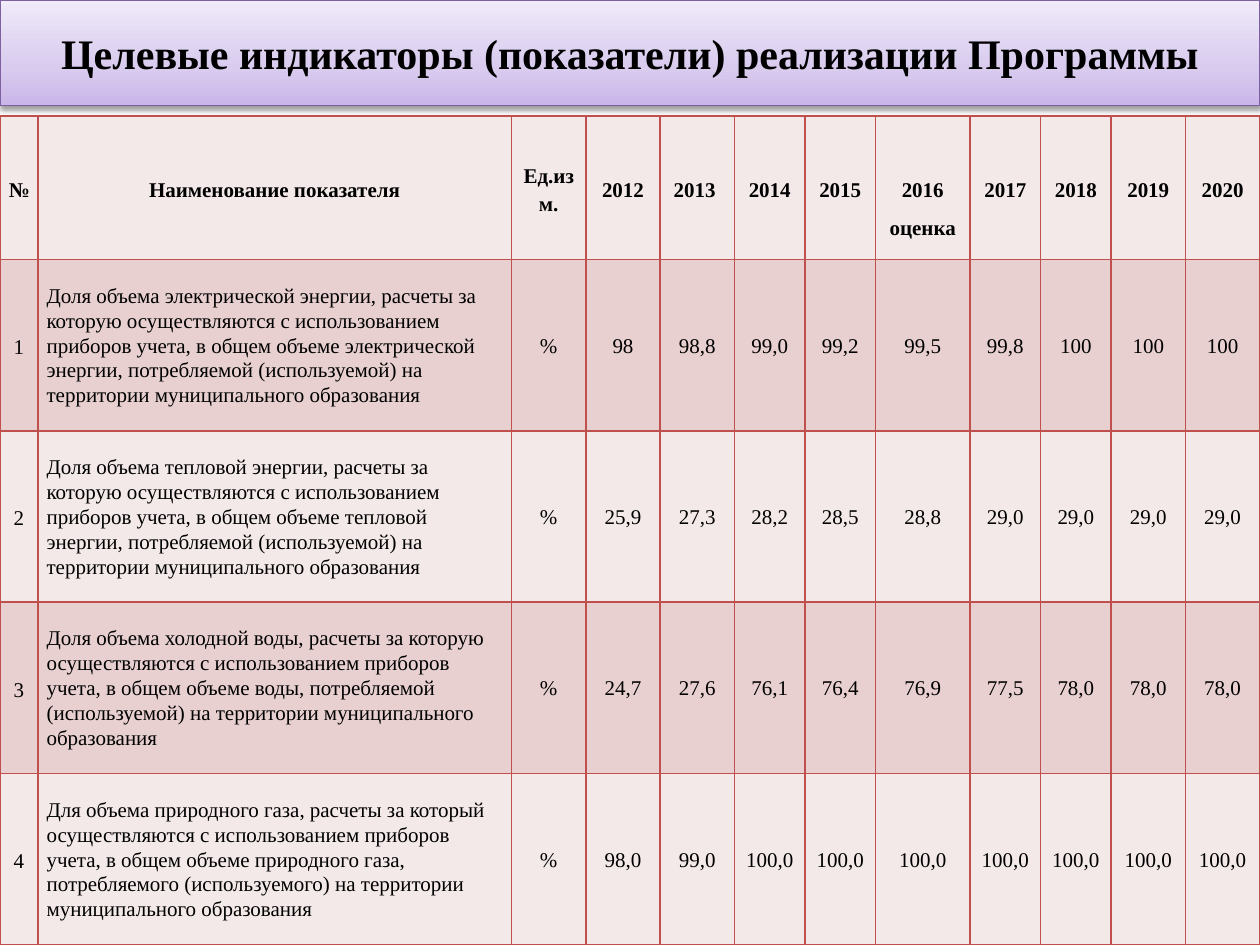
import copy

import pptx
import pptx.dml.color
import pptx.enum.shapes
import pptx.enum.text
import pptx.oxml
import pptx.oxml.ns
import pptx.util
from pptx.dml.color import RGBColor
from pptx.util import Inches

BLACK = RGBColor(0x00, 0x00, 0x00)
TITLE_LINE = RGBColor(0x7D, 0x60, 0xA0)
TITLE_STOPS = [
    (0, RGBColor(0xC9, 0xB5, 0xE8)),
    (0.35, RGBColor(0xD8, 0xCB, 0xEE)),
    (1, RGBColor(0xF0, 0xEA, 0xF9)),
]
BORDER = RGBColor(0xC0, 0x50, 0x4D)
BAND_FILLS = [RGBColor(0xF4, 0xE9, 0xE9), RGBColor(0xE8, 0xD0, 0xD0)]
FONT_NAME = "Times New Roman"
CENTER = pptx.enum.text.PP_ALIGN.CENTER
LEFT = pptx.enum.text.PP_ALIGN.LEFT
MIDDLE = pptx.enum.text.MSO_ANCHOR.MIDDLE

TITLE = "Целевые индикаторы (показатели) реализации Программы"
COLUMN_WIDTHS = [0.3, 3.76, 0.59, 0.59, 0.59, 0.56, 0.56, 0.75, 0.56, 0.56, 0.59, 0.59]
ROW_HEIGHTS = [1.14] + [1.36] * 4
HEADER = ["№", "Наименование показателя", "Ед.изм.", "2012", "2013 ", "2014", "2015",
          "2016\nоценка", "2017", "2018", "2019", "2020"]
INDICATORS = [
    ("Доля объема электрической энергии, расчеты за которую осуществляются с использованием "
     "приборов учета, в общем объеме электрической энергии, потребляемой (используемой) на "
     "территории муниципального образования",
     "98 98,8 99,0 99,2 99,5 99,8 100 100 100"),
    ("Доля объема тепловой энергии, расчеты за которую осуществляются с использованием "
     "приборов учета, в общем объеме тепловой энергии, потребляемой (используемой) на "
     "территории муниципального образования",
     "25,9 27,3 28,2 28,5 28,8 29,0 29,0 29,0 29,0"),
    ("Доля объема холодной воды, расчеты за которую осуществляются с использованием "
     "приборов учета, в общем объеме воды, потребляемой (используемой) на "
     "территории муниципального образования",
     "24,7 27,6 76,1 76,4 76,9 77,5 78,0 78,0 78,0"),
    ("Для объема природного газа, расчеты за который осуществляются с использованием "
     "приборов учета, в общем объеме природного газа, потребляемого (используемого) на "
     "территории муниципального образования",
     "98,0 99,0 100,0 100,0 100,0 100,0 100,0 100,0 100,0"),
]


def set_attributes(target, values):
    """Set every named value on the target object."""
    for name, value in values.items():
        setattr(target, name, value)


def write_text(text_frame, text, size, bold, alignment, line_spacing):
    """Write one paragraph for each line of text."""
    text_frame.text = text
    for index, paragraph in enumerate(text_frame.paragraphs):
        set_attributes(paragraph, {
            "alignment": alignment,
            "line_spacing": line_spacing,
            "space_before": pptx.util.Pt(6 if index else 0),
        })
        for run in paragraph.runs:
            set_attributes(run.font, {"name": FONT_NAME, "size": pptx.util.Pt(size), "bold": bold})
            run.font.color.rgb = BLACK


def apply_gradient(shape):
    """Fill the shape with the three title colours, from bottom to top."""
    shape.fill.gradient()
    shape.fill.gradient_angle = 90
    stop_list = shape._element.spPr.find(".//" + pptx.oxml.ns.qn("a:gsLst"))
    stop_list.append(copy.deepcopy(stop_list[-1]))
    for stop, (position, color) in zip(shape.fill.gradient_stops, TITLE_STOPS):
        stop.position = position
        stop.color.rgb = color


def apply_shadow(shape):
    """Give the shape a soft shadow that falls downwards."""
    shape.shadow.inherit = False
    effects = shape._element.spPr.find(pptx.oxml.ns.qn("a:effectLst"))
    effects.append(pptx.oxml.parse_xml(
        f'<a:outerShdw {pptx.oxml.ns.nsdecls("a")} blurRad="{pptx.util.Pt(3.1)}" '
        f'dist="{pptx.util.Pt(1.6)}" dir="5400000" rotWithShape="0">'
        '<a:srgbClr val="000000"><a:alpha val="38000"/></a:srgbClr></a:outerShdw>'))


def add_title_band(slide):
    """Add the title on its gradient band."""
    shape = slide.shapes.add_shape(
        pptx.enum.shapes.MSO_SHAPE.RECTANGLE, 0, 0, Inches(10), Inches(0.84))
    apply_gradient(shape)
    shape.line.color.rgb = TITLE_LINE
    shape.line.width = pptx.util.Pt(0.75)
    apply_shadow(shape)
    set_attributes(shape.text_frame, {"word_wrap": True, "vertical_anchor": MIDDLE})
    write_text(shape.text_frame, TITLE, 24, True, CENTER, 1)


def add_borders(cell):
    """Draw a thin line on all four sides of the cell."""
    properties = cell._tc.get_or_add_tcPr()
    for side in ("lnL", "lnR", "lnT", "lnB"):
        properties.append(pptx.oxml.parse_xml(
            f'<a:{side} {pptx.oxml.ns.nsdecls("a")} w="{pptx.util.Pt(1)}">'
            f'<a:solidFill><a:srgbClr val="{BORDER}"/></a:solidFill></a:{side}>'))


def fill_cell(cell, text, row, column):
    """Format one table cell by its row and column and write its text."""
    is_header = row == 0
    set_attributes(cell, {
        "margin_left": Inches(0.07),
        "margin_right": Inches(0.07),
        "margin_top": Inches(0.31 if "\n" in text else 0),
        "margin_bottom": 0,
        "vertical_anchor": MIDDLE,
    })
    add_borders(cell)
    cell.fill.solid()
    cell.fill.fore_color.rgb = BAND_FILLS[row % 2]
    alignment = LEFT if column == 1 and not is_header else CENTER
    line_spacing = 1.2 if is_header or column == 0 else 1.07
    write_text(cell.text_frame, text, 12, is_header, alignment, line_spacing)


def add_indicator_table(slide):
    """Add the table of indicators by year."""
    rows = [HEADER] + [[str(number), name, "%", *values.split()]
                       for number, (name, values) in enumerate(INDICATORS, 1)]
    table = slide.shapes.add_table(
        len(rows), len(HEADER), 0, Inches(0.92), Inches(10), Inches(6.58)).table
    for column, width in zip(table.columns, COLUMN_WIDTHS):
        column.width = Inches(width)
    for row, height in zip(table.rows, ROW_HEIGHTS):
        row.height = Inches(height)
    for row_index, texts in enumerate(rows):
        for column_index, text in enumerate(texts):
            fill_cell(table.cell(row_index, column_index), text, row_index, column_index)


def main():
    """Build the slide and save the presentation."""
    presentation = pptx.Presentation()
    set_attributes(presentation, {"slide_width": Inches(10), "slide_height": Inches(7.5)})
    slide = presentation.slides.add_slide(presentation.slide_layouts[6])
    add_title_band(slide)
    add_indicator_table(slide)
    presentation.save("out.pptx")


if __name__ == "__main__":
    main()
